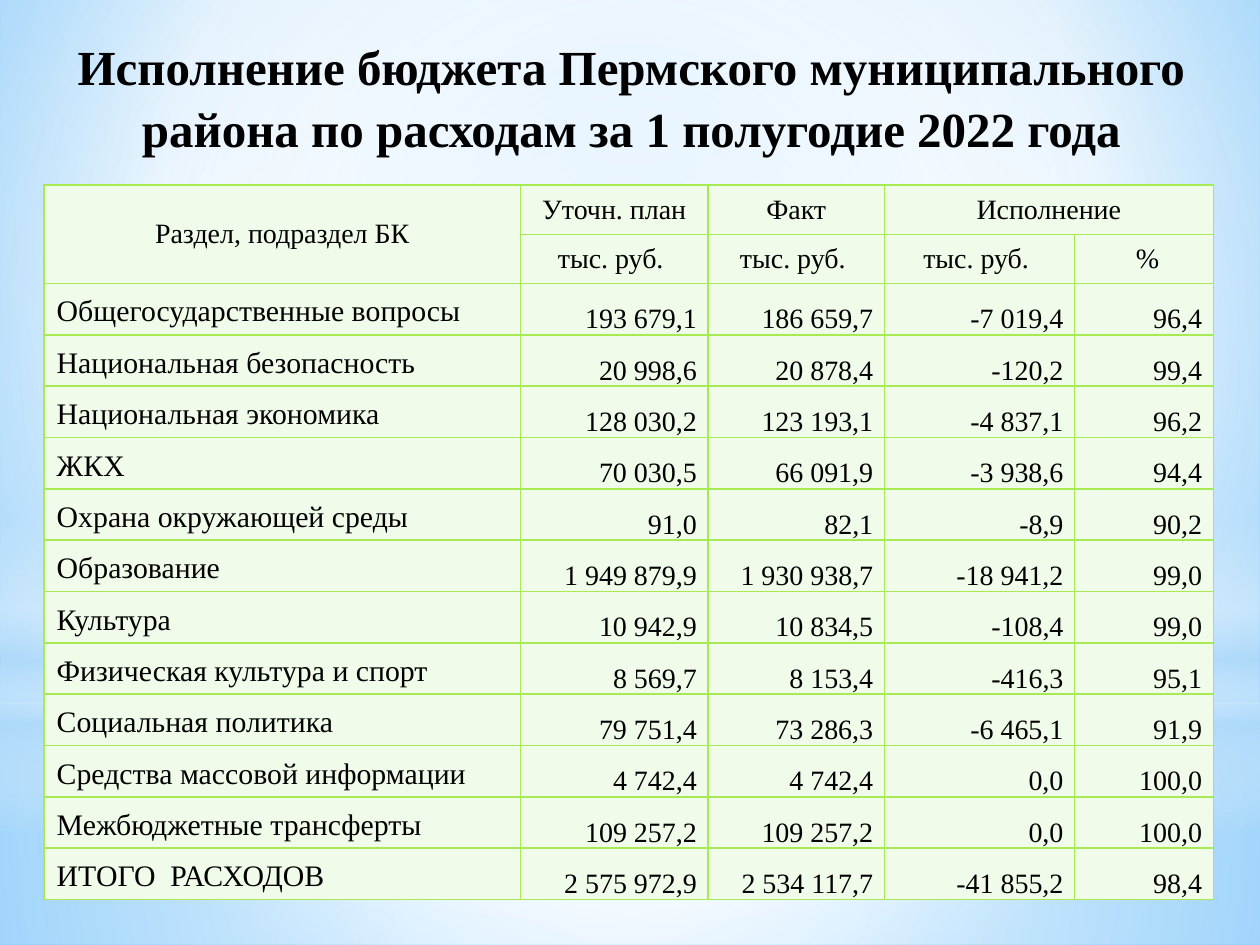
from dataclasses import dataclass

from lxml.etree import SubElement
from pptx import Presentation
from pptx.dml.color import RGBColor as Rgb
from pptx.enum.shapes import MSO_SHAPE as Kind
from pptx.enum.text import MSO_ANCHOR as Anchor, PP_ALIGN as Align
from pptx.oxml.ns import qn
from pptx.util import Inches, Pt

FONT = "Times New Roman"
TITLE = "Исполнение бюджета Пермского муниципального района по расходам за 1 полугодие 2022 года"
COLS = (3.78, 1.49, 1.4, 1.51, 1.1)
HEAD = (
    ("Раздел, подраздел БК", "Уточн. план", "Факт", "Исполнение", ""),
    ("", "тыс. руб. ", "тыс. руб. ", "тыс. руб. ", " %"),
)
ROWS = (
    ("Общегосударственные вопросы", "193 679,1", "186 659,7", "-7 019,4", "96,4"),
    ("Национальная безопасность", "20 998,6", "20 878,4", "-120,2", "99,4"),
    ("Национальная экономика", "128 030,2", "123 193,1", "-4 837,1", "96,2"),
    ("ЖКХ", "70 030,5", "66 091,9", "-3 938,6", "94,4"),
    ("Охрана окружающей среды", "91,0", "82,1", "-8,9", "90,2"),
    ("Образование", "1 949 879,9", "1 930 938,7", "-18 941,2", "99,0"),
    ("Культура", "10 942,9", "10 834,5", "-108,4", "99,0"),
    ("Физическая культура и спорт", "8 569,7", "8 153,4", "-416,3", "95,1"),
    ("Социальная политика", "79 751,4", "73 286,3", "-6 465,1", "91,9"),
    ("Средства массовой информации", "4 742,4", "4 742,4", "0,0", "100,0"),
    ("Межбюджетные трансферты", "109 257,2", "109 257,2", "0,0", "100,0"),
    ("ИТОГО  РАСХОДОВ", "2 575 972,9", "2 534 117,7", "-41 855,2", "98,4"),
)


@dataclass(frozen=True)
class Glow:
    kind: Kind
    top: float
    height: float
    stops: tuple
    focus: tuple | None = (50, 50, 50, 50)


@dataclass(frozen=True)
class Style:
    size: int
    align: Align
    anchor: Anchor
    inset: tuple


WIDE = (0.1, 0.05, 0.1, 0.05)
HEADER = Style(16, Align.CENTER, Anchor.MIDDLE, WIDE)
LABEL = Style(17, Align.LEFT, Anchor.BOTTOM, WIDE)
VALUE = Style(16, Align.RIGHT, Anchor.BOTTOM, (0.01, 0.01, 0.09, 0))

GLOWS = (
    Glow(Kind.RECTANGLE, 5.58, 1.92,
         ((0, "FFFFFF", 91), (37, "FFFFFF", 76), (100, "B4DCFA", 79))),
    Glow(Kind.RECTANGLE, 0, 5.58,
         ((0, "FFFFFF", 89), (48, "FFFFFF", 62), (100, "B4DCFA", 79))),
    Glow(Kind.RECTANGLE, 4.12, 2.5,
         ((0, "FFFFFF", 0), (29, "FFFFFF", 30), (45, "B4DCFA", 40),
          (55, "FFFFFF", 26), (65, "B4DCFA", 60), (100, "FFFFFF", 0)), None),
    Glow(Kind.OVAL, 1.75, 5.58, ((0, "FFFFFF", 100), (56, "FFFFFF", 0))),
)


def color(code: str) -> Rgb:
    return Rgb.from_string(code)


def blend(fill, host, stops: tuple, focus: tuple | None) -> None:
    fill.gradient()
    grad = next(host.iter(qn("a:gradFill")))
    for child in list(grad):
        grad.remove(child)
    group = SubElement(grad, qn("a:gsLst"))
    for pos, code, alpha in stops:
        stop = SubElement(group, qn("a:gs"), pos=str(pos * 1000))
        tint = SubElement(stop, qn("a:srgbClr"), val=code)
        if alpha < 100:
            SubElement(tint, qn("a:alpha"), val=str(alpha * 1000))
    if focus:
        ring = SubElement(grad, qn("a:path"), path="circle")
        sides = {side: str(part * 1000) for side, part in zip("ltrb", focus)}
        SubElement(ring, qn("a:fillToRect"), sides)
    else:
        SubElement(grad, qn("a:lin"), ang="5400000", scaled="0")


def draw_glow(slide, glow: Glow) -> None:
    shape = slide.shapes.add_shape(
        glow.kind, 0, Inches(glow.top), Inches(10), Inches(glow.height))
    shape.shadow.inherit = False
    shape.line.fill.background()
    blend(shape.fill, shape.element, glow.stops, glow.focus)


def write(frame, text: str, size: int, align: Align, bold: bool = False) -> None:
    para = frame.paragraphs[0]
    para.alignment = align
    run = para.add_run()
    run.text = text
    run.font.name = FONT
    run.font.size = Pt(size)
    run.font.bold = bold
    run.font.color.rgb = color("000000")


def draw_title(slide) -> None:
    title = slide.shapes.title
    title.left, title.top = Inches(0.51), Inches(0.21)
    title.width, title.height = Inches(9), Inches(0.71)
    frame = title.text_frame
    frame.word_wrap = True
    frame.vertical_anchor = Anchor.TOP
    write(frame, TITLE, 28, Align.CENTER, True)
    frame.paragraphs[0].line_spacing = 1.06
    title.element.getparent().append(title.element)


def frame_cell(cell) -> None:
    props = cell.fill._xPr
    for spot, side in enumerate(("lnL", "lnR", "lnT", "lnB")):
        line = props.makeelement(qn(f"a:{side}"), {"w": str(Pt(1))})
        props.insert(spot, line)
        solid = SubElement(line, qn("a:solidFill"))
        SubElement(solid, qn("a:srgbClr"), val="A7EA52")


def draw_cell(cell, text: str, style: Style) -> None:
    cell.fill.solid()
    cell.fill.fore_color.rgb = color("F1FBE9")
    cell.vertical_anchor = style.anchor
    (cell.margin_left, cell.margin_top,
     cell.margin_right, cell.margin_bottom) = map(Inches, style.inset)
    frame_cell(cell)
    if text:
        write(cell.text_frame, text, style.size, style.align)


def draw_table(slide) -> None:
    lines = HEAD + ROWS
    table = slide.shapes.add_table(
        len(lines), len(COLS), Inches(0.35), Inches(1.47),
        Inches(9.29), Inches(5.67)).table
    table.first_row = table.horz_banding = False
    for col, width in zip(table.columns, COLS):
        col.width = Inches(width)
    body = (5.67 - 2 * 0.39) / len(ROWS)
    for r, line in enumerate(lines):
        head = r < len(HEAD)
        table.rows[r].height = Inches(0.39 if head else body)
        for c, text in enumerate(line):
            style = HEADER if head else VALUE if c else LABEL
            draw_cell(table.cell(r, c), text, style)
    table.cell(0, 0).merge(table.cell(1, 0))
    table.cell(0, 3).merge(table.cell(0, 4))


def main() -> None:
    deck = Presentation()
    deck.slide_width, deck.slide_height = Inches(10), Inches(7.5)
    slide = deck.slides.add_slide(deck.slide_layouts[5])
    sky = ((0, "9ED5FF", 100), (60, "FFFFFF", 100), (100, "5BB9FF", 100))
    blend(slide.background.fill, slide.element, sky, (20, 10, 20, 60))
    for glow in GLOWS:
        draw_glow(slide, glow)
    draw_title(slide)
    draw_table(slide)
    deck.save("out.pptx")


if __name__ == "__main__":
    main()
